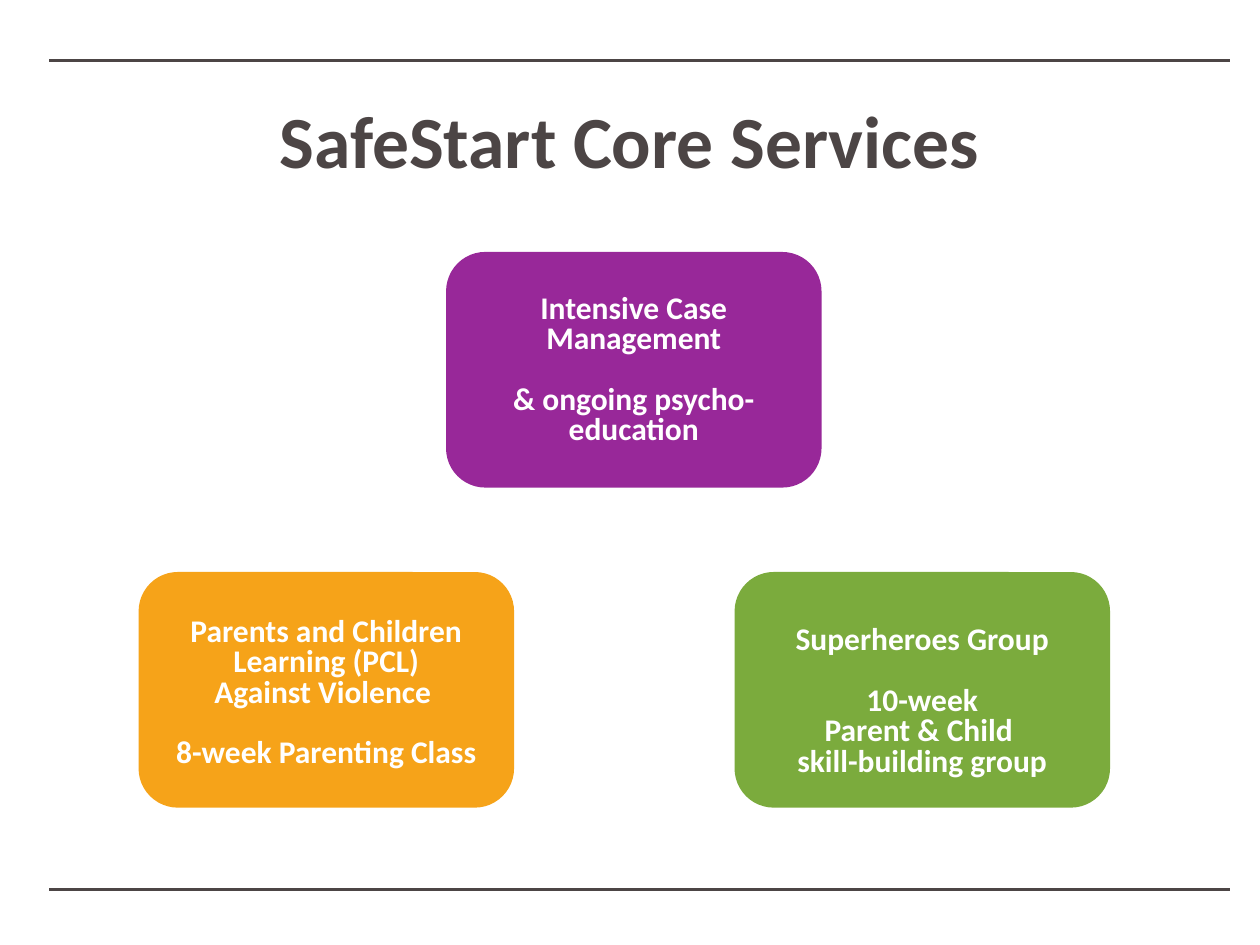
from dataclasses import dataclass

from lxml.etree import SubElement
from pptx import Presentation
from pptx.dml.color import RGBColor
from pptx.enum.shapes import MSO_CONNECTOR, MSO_SHAPE
from pptx.enum.text import MSO_ANCHOR, PP_ALIGN
from pptx.oxml.ns import qn
from pptx.util import Inches, Pt


@dataclass(frozen=True)
class Theme:
    font: str = "Calibri"
    ink: str = "4C4545"
    white: str = "FFFFFF"
    purple: str = "982899"
    orange: str = "F6A319"
    green: str = "7BAB3D"
    title_size: float = 42
    card_size: float = 18
    rule_width: float = 2
    line_spacing: float = 0.8
    group_gap: float = 17.5


THEME = Theme()
CARD_WIDTH, CARD_HEIGHT = 2.98, 1.87


def write_groups(frame, groups, *, size, color, margins):
    frame.word_wrap = True
    frame.vertical_anchor = MSO_ANCHOR.MIDDLE
    left, top, right, bottom = (Inches(margin) for margin in margins)
    frame.margin_left, frame.margin_top = left, top
    frame.margin_right, frame.margin_bottom = right, bottom
    paragraph = None
    for group in groups:
        for line_index, line in enumerate(group):
            starts_later_group = paragraph is not None and line_index == 0
            paragraph = frame.paragraphs[0] if paragraph is None else frame.add_paragraph()
            paragraph.text = line
            paragraph.alignment = PP_ALIGN.CENTER
            paragraph.line_spacing = THEME.line_spacing
            paragraph.space_before = Pt(THEME.group_gap if starts_later_group else 0)
            paragraph.font.name = THEME.font
            paragraph.font.size = Pt(size)
            paragraph.font.bold = True
            paragraph.font.color.rgb = RGBColor.from_string(color)


def add_rule(slide, top):
    rule = slide.shapes.add_connector(
        MSO_CONNECTOR.STRAIGHT, Inches(0.39), Inches(top), Inches(9.76), Inches(top)
    )
    rule.line.color.rgb = RGBColor.from_string(THEME.ink)
    rule.line.width = Pt(THEME.rule_width)
    SubElement(rule._element.spPr, qn("a:effectLst"))


def add_title(slide, text):
    title = slide.shapes.title
    title.left, title.top = Inches(0.51), Inches(0.72)
    title.width, title.height = Inches(8.97), Inches(1.47)
    write_groups(title.text_frame, [[text]], size=THEME.title_size, color=THEME.ink,
                 margins=(0.1, 0.05, 0.1, 0.62))


def add_service(slide, left, top, fill, groups, *, side_margin, top_margin):
    service = slide.shapes.add_shape(
        MSO_SHAPE.ROUNDED_RECTANGLE,
        Inches(left), Inches(top), Inches(CARD_WIDTH), Inches(CARD_HEIGHT),
    )
    service.shadow.inherit = False
    service.fill.solid()
    service.fill.fore_color.rgb = RGBColor.from_string(fill)
    service.line.fill.background()
    write_groups(service.text_frame, groups, size=THEME.card_size, color=THEME.white,
                 margins=(side_margin, top_margin, side_margin, 0))


def main():
    presentation = Presentation()
    presentation.slide_width, presentation.slide_height = Inches(10), Inches(7.5)
    slide = presentation.slides.add_slide(presentation.slide_layouts[5])

    add_title(slide, "SafeStart Core Services")
    for rule_top in (0.48, 7.06):
        add_rule(slide, rule_top)

    add_service(slide, 3.54, 2, THEME.purple,
                [["Intensive Case Management"], ["& ongoing psycho-education"]],
                side_margin=0.16, top_margin=0.02)
    lower_top = 4.54
    add_service(slide, 1.1, lower_top, THEME.orange,
                [["Parents and Children Learning (PCL)", "Against Violence "],
                 ["8-week Parenting Class"]],
                side_margin=0.09, top_margin=0.07)
    add_service(slide, 5.83, lower_top, THEME.green,
                [["Superheroes Group"],
                 ["10-week", "Parent & Child ", "skill-building group"]],
                side_margin=0.16, top_margin=0.2)

    presentation.save("out.pptx")


if __name__ == "__main__":
    main()
